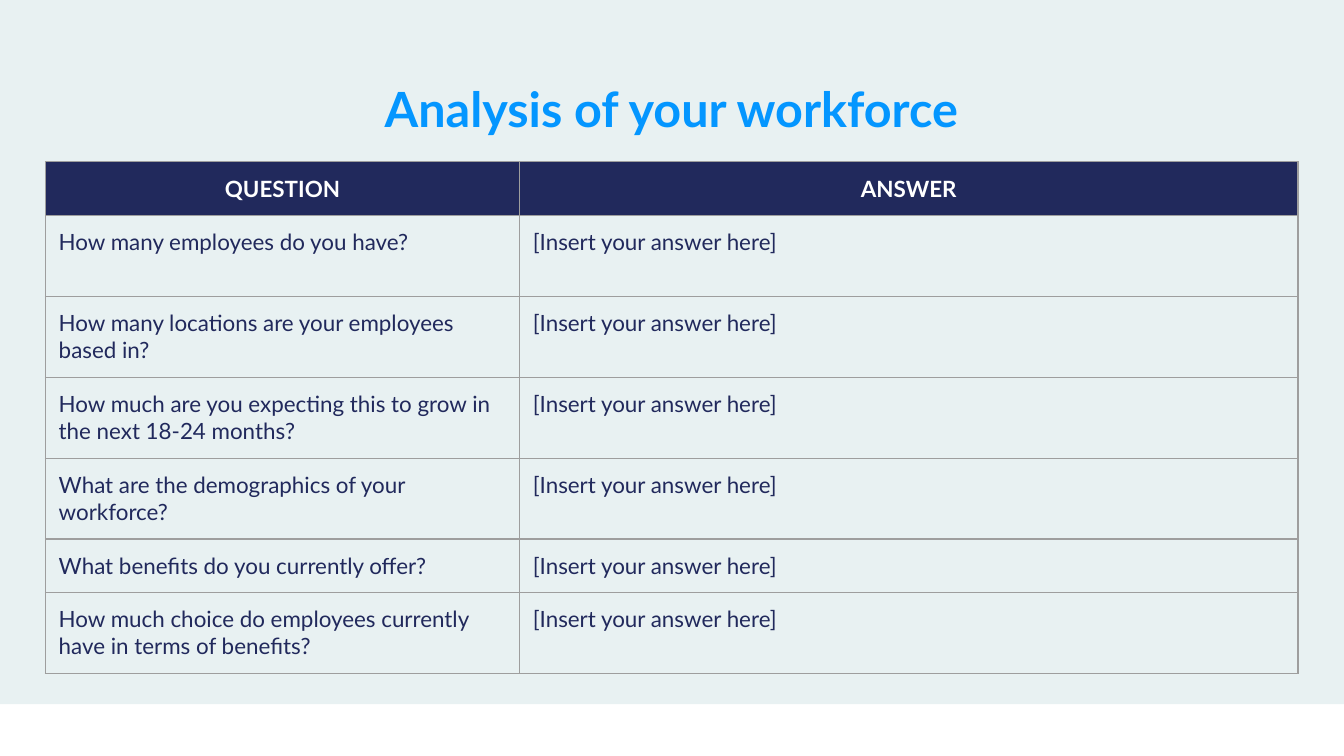
"""Build the workforce analysis slide with its question and answer table."""
import pptx
import pptx.dml.color
import pptx.enum.shapes
import pptx.enum.text
import pptx.oxml
import pptx.oxml.ns
import pptx.util
from pptx.util import Cm

NAVY = "21295C"
ANSWER = "[Insert your answer here]"
ALIGN = pptx.enum.text.PP_ALIGN


def color(value):
    """Turn a hex string into a colour."""
    return pptx.dml.color.RGBColor.from_string(value)


def write(text_frame, text, size=12, fill=NAVY, bold=False, align=ALIGN.LEFT):
    """Put formatted text in a text frame."""
    paragraph = text_frame.paragraphs[0]
    paragraph.alignment = align
    run = paragraph.add_run()
    run.text = text
    run.font.name = "Lato"
    run.font.size = pptx.util.Pt(size)
    run.font.bold = bold
    run.font.color.rgb = color(fill)


presentation = pptx.Presentation()
presentation.slide_width = Cm(25.4)
presentation.slide_height = Cm(14.29)
slide = presentation.slides.add_slide(presentation.slide_layouts[6])

panel = slide.shapes.add_shape(
    pptx.enum.shapes.MSO_SHAPE.RECTANGLE, 0, 0, Cm(25.4), Cm(13.31))
panel.shadow.inherit = False
panel.fill.solid()
panel.fill.fore_color.rgb = color("E8F1F2")
panel.line.fill.background()

title = slide.shapes.add_textbox(Cm(0.86), Cm(1.25), Cm(23.67), Cm(1.6))
title_frame = title.text_frame
title_frame.word_wrap = True
title_frame.margin_left = title_frame.margin_right = Cm(0.25)
title_frame.margin_top = title_frame.margin_bottom = Cm(0.25)
write(title_frame, "Analysis of your workforce", size=26, fill="0496FF",
      bold=True, align=ALIGN.CENTER)

rows = [
    ("QUESTION", "ANSWER", 1.01),
    ("How many employees do you have?", ANSWER, 1.53),
    ("How many locations are your employees based in?", ANSWER, 1.53),
    ("How much are you expecting this to grow in the next 18-24 months?", ANSWER, 1.53),
    ("What are the demographics of your workforce?", ANSWER, 1.53),
    ("What benefits do you currently offer?", ANSWER, 1.01),
    ("How much choice do employees currently have in terms of benefits?", ANSWER, 1.53),
]
total_height = sum(height for question, answer, height in rows)
table = slide.shapes.add_table(
    len(rows), 2, Cm(0.86), Cm(3.06), Cm(23.67), Cm(total_height)).table
table.horz_banding = False
table.columns[0].width = Cm(8.96)
table.columns[1].width = Cm(14.71)

for row_index, (question, answer, height) in enumerate(rows):
    table.rows[row_index].height = Cm(height)
    for column_index, text in enumerate((question, answer)):
        cell = table.cell(row_index, column_index)
        cell.margin_left = cell.margin_right = Cm(0.25)
        cell.margin_top = cell.margin_bottom = Cm(0.25)
        if row_index == 0:
            cell.fill.solid()
            cell.fill.fore_color.rgb = color(NAVY)
            write(cell.text_frame, text, fill="FFFFFF", bold=True, align=ALIGN.CENTER)
        else:
            cell.fill.background()
            write(cell.text_frame, text)
        properties = cell._tc.get_or_add_tcPr()
        for position, side in enumerate(("lnL", "lnR", "lnT", "lnB")):
            border = pptx.oxml.parse_xml(
                f'<a:{side} {pptx.oxml.ns.nsdecls("a")} w="9525"><a:solidFill>'
                f'<a:srgbClr val="9E9E9E"/></a:solidFill></a:{side}>')
            properties.insert(position, border)

presentation.save("out.pptx")
